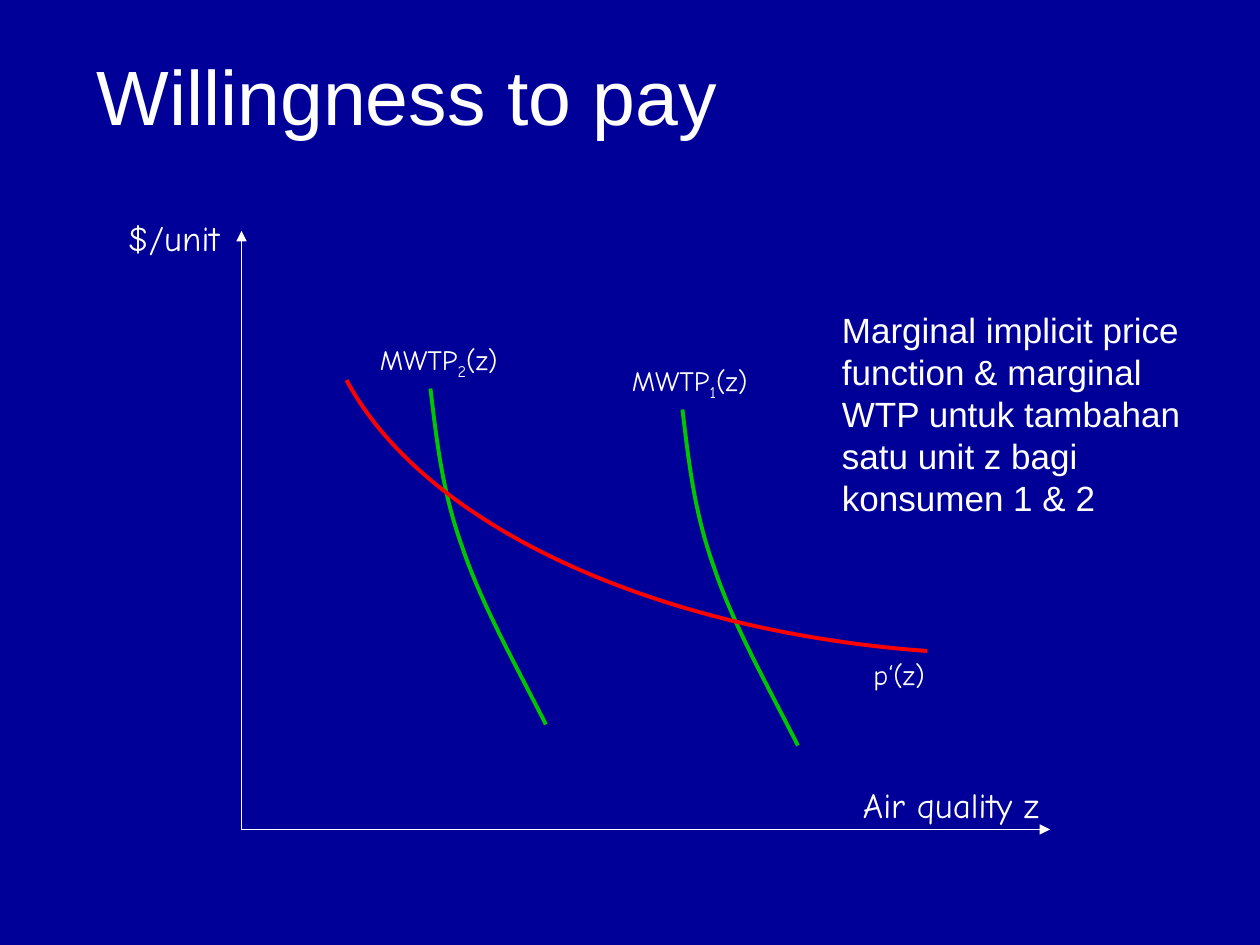
from pptx import Presentation
from pptx.dml.color import RGBColor
from pptx.enum.shapes import MSO_CONNECTOR
from pptx.enum.text import MSO_ANCHOR, PP_ALIGN
from pptx.oxml.ns import qn
from pptx.util import Inches, Pt
from lxml.etree import SubElement

CELLS_PER_INCH = 12
WHITE, NAVY, GREEN, RED = "FFFFFF", "000099", "00C600", "FF0000"
ORIGIN = (23, 79)
AXIS_ENDS = [(23, 22), (100, 79)]
DEMAND_STEPS = [(0, 0), (0.6, 4.9), (1.1, 9.7), (3, 15), (4.8, 20.4), (8, 26.1), (11, 32)]
DEMAND_STARTS = [(41, 37), (65, 39)]
PRICE_CURVE = [(88.3, 62), (62.2, 60.1), (40.4, 50), (33, 36.2)]
AXIS_LABELS = [("Air quality z", (81, 74, 21.5, 5.2)), ("$/unit", (11, 20, 14.3, 5.2))]
DEMAND_LABELS = [("1", (59, 34, 15, 4.4)), ("2", (35, 32, 15.2, 4.4))]
CAPTION = ("Marginal implicit price function & marginal WTP untuk tambahan "
           "satu unit z bagi konsumen 1 & 2")


def grid(cells):
    """Turn a sequence of grid cells into lengths."""
    return [Inches(cell / CELLS_PER_INCH) for cell in cells]


def color(hex_string):
    """Turn a hex string into a colour."""
    return RGBColor.from_string(hex_string)


def format_runs(paragraph, size, font_name):
    """Give every run of a paragraph its size, font and white colour."""
    for run in paragraph.runs:
        run.font.size = Pt(size)
        run.font.name = font_name
        run.font.color.rgb = color(WHITE)


def style_line(shape, hex_string, width):
    """Set the line colour and width of a shape."""
    shape.line.color.rgb = color(hex_string)
    shape.line.width = Pt(width)


def set_title(slide, text, box):
    """Move and format the title placeholder."""
    title = slide.shapes.title
    title.left, title.top, title.width, title.height = grid(box)
    text_frame = title.text_frame
    text_frame.text = text
    text_frame.vertical_anchor = MSO_ANCHOR.TOP
    paragraph = text_frame.paragraphs[0]
    paragraph.alignment = PP_ALIGN.LEFT
    format_runs(paragraph, 44, "Arial")


def add_label(slide, parts, box, size, font_name="Comic Neue"):
    """Add a text box from one or more runs and return its paragraph."""
    text_frame = slide.shapes.add_textbox(*grid(box)).text_frame
    text_frame.word_wrap = True
    paragraph = text_frame.paragraphs[0]
    for part in parts:
        paragraph.add_run().text = part
    format_runs(paragraph, size, font_name)
    return paragraph


def add_axis(slide, start, end):
    """Add a thin white arrow."""
    axis = slide.shapes.add_connector(MSO_CONNECTOR.STRAIGHT, *grid(start + end))
    style_line(axis, WHITE, 0.75)
    SubElement(axis.line._get_or_add_ln(), qn("a:tailEnd"), type="triangle")
    SubElement(axis._element.spPr, qn("a:effectLst"))


def bend_segments(shape):
    """Turn each three straight segments of a freeform into one Bezier segment."""
    outline = next(shape._element.iter(qn("a:path")))
    segments = outline.findall(qn("a:lnTo"))
    for first in range(0, len(segments), 3):
        bezier = SubElement(outline, qn("a:cubicBezTo"))
        for segment in segments[first:first + 3]:
            bezier.append(segment[0])
            outline.remove(segment)


def add_curve(slide, controls, hex_string):
    """Add an open curve through chained cubic Bezier segments."""
    builder = slide.shapes.build_freeform(*grid(controls[0]))
    builder.add_line_segments([grid(point) for point in controls[1:]], close=False)
    curve = builder.convert_to_shape()
    bend_segments(curve)
    curve.shadow.inherit = False
    curve.fill.background()
    style_line(curve, hex_string, 2.25)


def main():
    """Build the willingness to pay slide."""
    presentation = Presentation()
    presentation.slide_width, presentation.slide_height = grid((120, 90))
    slide = presentation.slides.add_slide(presentation.slide_layouts[5])
    slide.background.fill.solid()
    slide.background.fill.fore_color.rgb = color(NAVY)
    set_title(slide, "Willingness to pay", (8, 4, 102, 15))
    for end in AXIS_ENDS:
        add_axis(slide, ORIGIN, end)
    for text, box in AXIS_LABELS:
        add_label(slide, [text], box, 20)
    add_label(slide, ["p‘(z)"], (82, 62, 7.7, 4.4), 16)
    for left, top in DEMAND_STARTS:
        add_curve(slide, [(left + x, top + y) for x, y in DEMAND_STEPS], GREEN)
    for consumer, box in DEMAND_LABELS:
        paragraph = add_label(slide, ["MWTP", consumer, "(z)"], box, 16)
        paragraph.runs[1].font._element.set("baseline", "-25000")
    add_curve(slide, PRICE_CURVE, RED)
    caption = add_label(slide, [CAPTION], (79, 28.8, 36, 21.2), 20, "Arial")
    caption.line_spacing = Pt(24)
    presentation.save("out.pptx")


if __name__ == "__main__":
    main()
